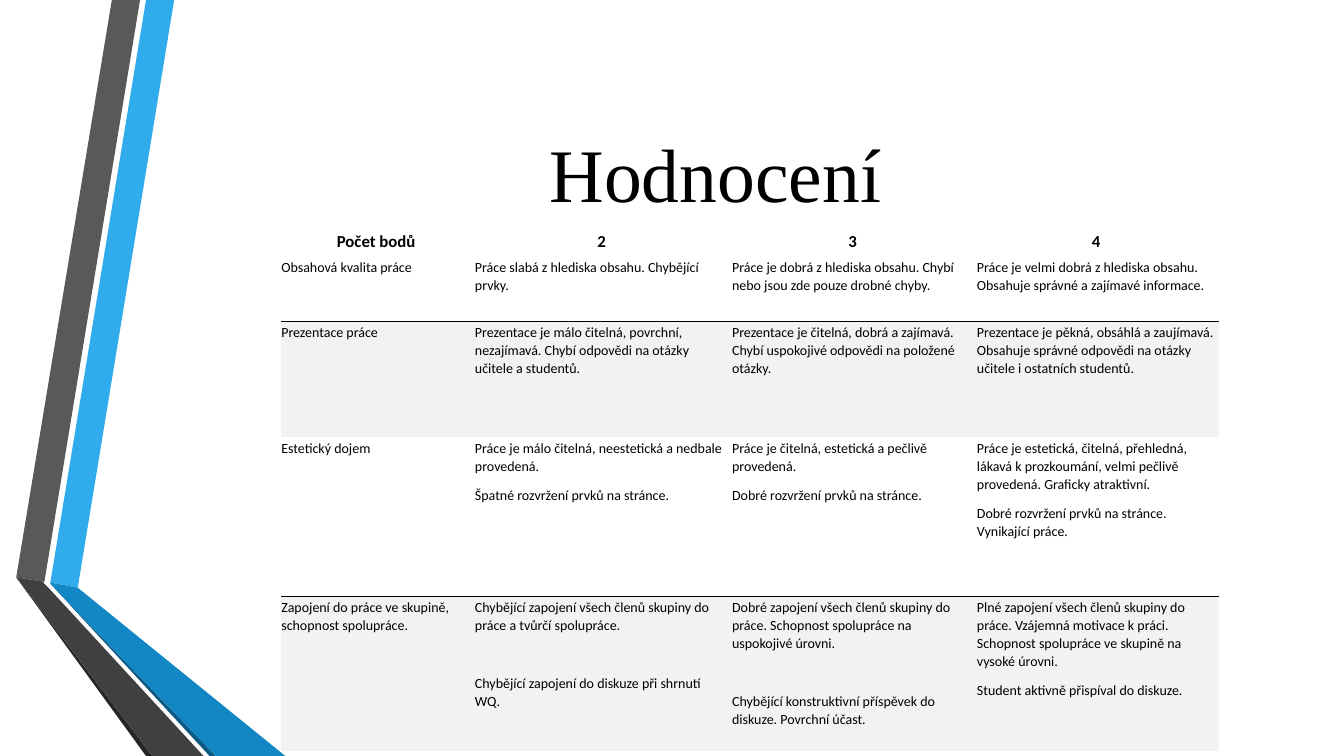
from lxml import etree
from pptx import Presentation
from pptx.dml.color import RGBColor
from pptx.enum.text import MSO_ANCHOR, PP_ALIGN
from pptx.oxml.ns import qn
from pptx.util import Cm, Pt

TOP, MIDDLE, BOTTOM = MSO_ANCHOR.TOP, MSO_ANCHOR.MIDDLE, MSO_ANCHOR.BOTTOM
LEFT, CENTER = PP_ALIGN.LEFT, PP_ALIGN.CENTER

BLACK = RGBColor(0x00, 0x00, 0x00)
PALE = RGBColor(0xF2, 0xF2, 0xF2)
SKY = RGBColor(0x30, 0xAC, 0xEC)
BLUE = RGBColor(0x12, 0x87, 0xC3)
NAVY = RGBColor(0x0C, 0x5A, 0x82)
GREY = RGBColor(0x59, 0x59, 0x59)
DARK = RGBColor(0x40, 0x40, 0x40)
COAL = RGBColor(0x26, 0x26, 0x26)

TITLE = "Hodnocení"
ROWS = [
    [["Počet bodů"], ["2"], ["3"], ["4"]],
    [
        ["Obsahová kvalita práce"],
        ["Práce slabá z hlediska obsahu. Chybějící prvky."],
        ["Práce je dobrá z hlediska obsahu. Chybí nebo jsou zde pouze drobné chyby."],
        ["Práce je velmi dobrá z hlediska obsahu. Obsahuje správné a zajímavé informace."],
    ],
    [
        ["Prezentace práce"],
        ["Prezentace je málo čitelná, povrchní, nezajímavá. "
         "Chybí odpovědi na otázky učitele a studentů."],
        ["Prezentace je čitelná, dobrá a zajímavá. "
         "Chybí uspokojivé odpovědi na položené otázky."],
        ["Prezentace je pěkná, obsáhlá a zaujímavá. "
         "Obsahuje správné odpovědi na otázky učitele i ostatních studentů."],
    ],
    [
        ["Estetický dojem"],
        ["Práce je málo čitelná, neestetická a nedbale provedená.",
         "Špatné rozvržení prvků na stránce."],
        ["Práce je čitelná, estetická a pečlivě provedená.",
         "Dobré rozvržení prvků na stránce."],
        ["Práce je estetická, čitelná, přehledná, lákavá k prozkoumání, "
         "velmi pečlivě provedená. Graficky atraktivní.",
         "Dobré rozvržení prvků na stránce. Vynikající práce."],
    ],
    [
        ["Zapojení do práce ve skupině, schopnost spolupráce."],
        ["Chybějící zapojení všech členů skupiny do práce a tvůrčí spolupráce.",
         "Chybějící zapojení do diskuze při shrnutí WQ."],
        ["Dobré zapojení všech členů skupiny do práce. "
         "Schopnost spolupráce na uspokojivé úrovni.",
         "Chybějící konstruktivní příspěvek do diskuze. Povrchní účast."],
        ["Plné zapojení všech členů skupiny do práce. Vzájemná motivace k práci. "
         "Schopnost spolupráce ve skupině na vysoké úrovni.",
         "Student aktivně přispíval do diskuze."],
    ],
]
WIDTHS = [4.88, 6.48, 6.17, 6.11]
HEIGHTS = [0.86, 1.63, 2.92, 4.01, 3.89]
SHADED = {2, 4}
RULED = {1, 3}
SPACED = {(4, 1), (4, 2)}
BANDS = [
    (SKY, [(1.27, 14.68), (1.96, 14.81), (4.39, 0), (3.68, 0)]),
    (GREY, [(3.53, 0), (2.82, 0), (0.41, 14.55), (1.12, 14.66)]),
    (COAL, [(0.41, 14.55), (3.68, 19.05), (3.84, 19.05)]),
    (NAVY, [(1.27, 14.71), (5.28, 19.05), (5.44, 19.05)]),
    (BLUE, [(1.27, 14.68), (1.27, 14.71), (5.44, 19.05), (7.19, 19.05), (1.96, 14.81)]),
    (DARK, [(5.13, 19.05), (1.22, 14.81), (1.09, 14.68), (1.12, 14.66),
            (0.41, 14.55), (3.84, 19.05)]),
]


def write(frame, *texts, size=10, font="Calibri", bold=False, align=LEFT,
          line=1.06, after=8, gap=0):
    frame.word_wrap = True
    for i, text in enumerate(texts):
        par = frame.add_paragraph() if i else frame.paragraphs[0]
        par.alignment = align
        par.line_spacing = line
        par.space_before = Pt(gap if i else 0)
        par.space_after = Pt(after)
        run = par.add_run()
        run.text = text
        run.font.size = Pt(size)
        run.font.name = font
        run.font.bold = bold
        run.font.color.rgb = BLACK


def edge(cell, lines):
    props = cell._tc.get_or_add_tcPr()
    for i, side in enumerate(("lnL", "lnR", "lnT", "lnB")):
        rule = etree.Element(qn("a:" + side), w=str(Pt(0.75)))
        if side in lines:
            fill = etree.SubElement(rule, qn("a:solidFill"))
            etree.SubElement(fill, qn("a:srgbClr"), val=str(BLACK))
        else:
            etree.SubElement(rule, qn("a:noFill"))
        props.insert(i, rule)


def draw_band(slide, color, points):
    spots = [(Cm(x), Cm(y)) for x, y in points]
    path = slide.shapes.build_freeform(*spots[0], scale=1.0)
    path.add_line_segments(spots[1:], close=True)
    band = path.convert_to_shape()
    band.shadow.inherit = False
    band.fill.solid()
    band.fill.fore_color.rgb = color
    band.line.fill.background()


def fill_cell(cell, row, col):
    head = row == 0
    cell.margin_left, cell.margin_right = Cm(0), Cm(0.1)
    cell.margin_top, cell.margin_bottom = Cm(0.03 if head else 0.05), Cm(0.13)
    cell.vertical_anchor = BOTTOM if head else TOP
    write(cell.text_frame, *ROWS[row][col], size=12 if head else 10, bold=head,
          align=CENTER if head else LEFT, gap=20.6 if (row, col) in SPACED else 0)
    lines = {"lnB"} if row in RULED else {"lnT"} if row in SHADED else set()
    edge(cell, lines)
    if row in SHADED:
        cell.fill.solid()
        cell.fill.fore_color.rgb = PALE
    else:
        cell.fill.background()


def draw_table(slide):
    frame = slide.shapes.add_table(len(HEIGHTS), len(WIDTHS), Cm(7.09), Cm(5.61),
                                   Cm(sum(WIDTHS)), Cm(sum(HEIGHTS)))
    table = frame.table
    table.first_row = False
    table.horz_banding = False
    for col, width in enumerate(WIDTHS):
        table.columns[col].width = Cm(width)
    for row, height in enumerate(HEIGHTS):
        table.rows[row].height = Cm(height)
        for col in range(len(WIDTHS)):
            fill_cell(table.cell(row, col), row, col)


def main():
    deck = Presentation()
    deck.slide_width, deck.slide_height = Cm(33.87), Cm(19.05)
    slide = deck.slides.add_slide(deck.slide_layouts[6])
    for color, points in BANDS:
        draw_band(slide, color, points)
    box = slide.shapes.add_textbox(Cm(4.11), Cm(1.9), Cm(27.84), Cm(4.88))
    box.text_frame.vertical_anchor = MIDDLE
    write(box.text_frame, TITLE, size=54, font="Times New Roman", align=CENTER,
          line=1.0, after=0)
    draw_table(slide)
    deck.save("out.pptx")


if __name__ == "__main__":
    main()
